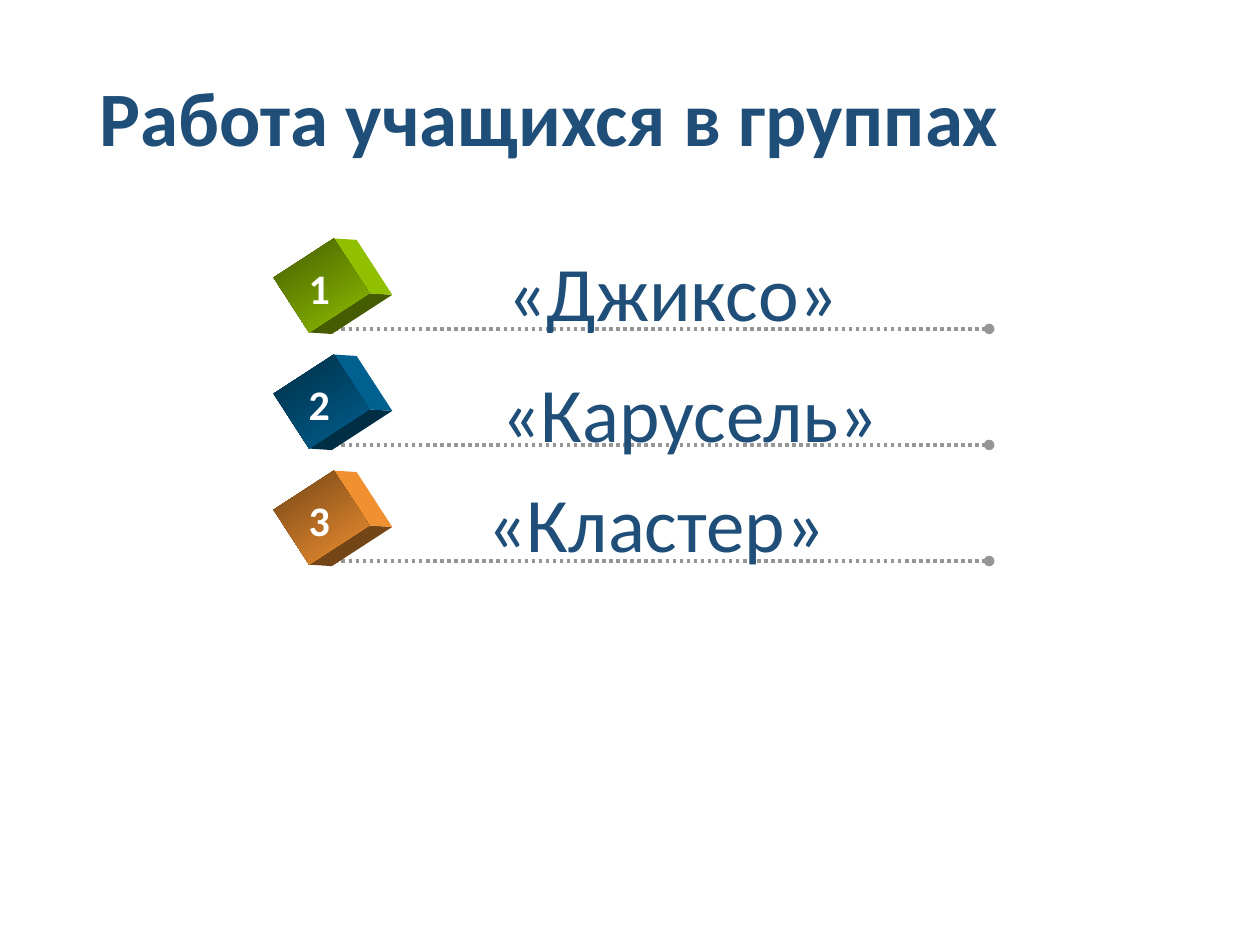
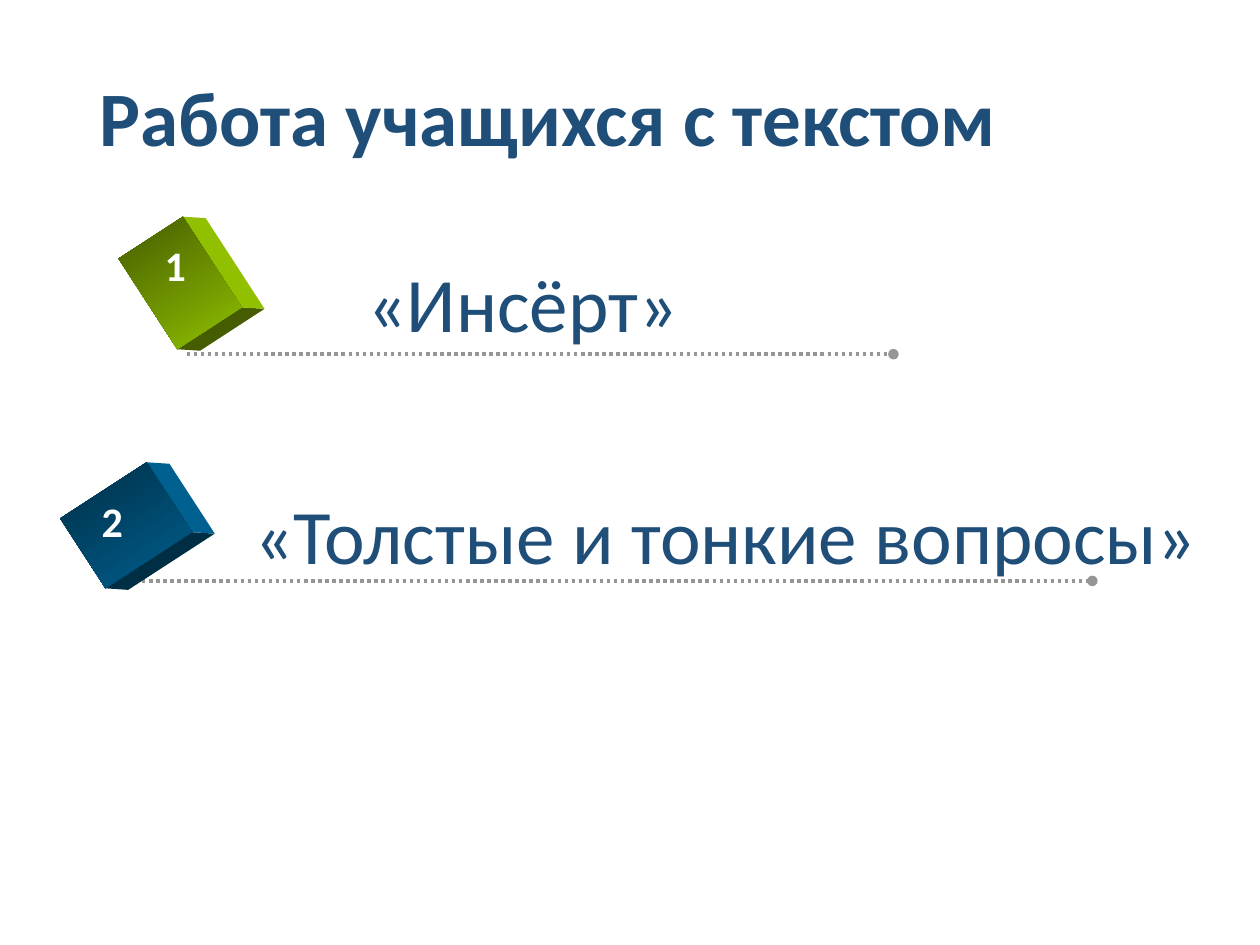
"""Build two slides of numbered cubes with dotted leader lines."""
import math
from dataclasses import dataclass
from typing import Any

import lxml.etree
import pptx
import pptx.dml.color
import pptx.enum.dml
import pptx.enum.shapes
import pptx.enum.text
import pptx.oxml.ns
import pptx.slide
import pptx.util

Cm = pptx.util.Cm
RGBColor = pptx.dml.color.RGBColor
NAVY = RGBColor(0x1F, 0x4E, 0x79)
WHITE = RGBColor(0xFF, 0xFF, 0xFF)
GREY = RGBColor(0x96, 0x96, 0x96)
GREEN = RGBColor(0x99, 0xCC, 0x00)
BLUE = RGBColor(0x00, 0x66, 0x99)
ORANGE = RGBColor(0xFF, 0x99, 0x33)

TILT = 57
DEPTH = (0.46, 0.03)
LIT, SHADED = 0.94, 0.45
TITLE = {"size": pptx.util.Pt(44), "bold": True}
LABEL = {"size": pptx.util.Pt(44), "bold": False}
DIGIT = {"size": pptx.util.Pt(24), "bold": True}
Point = tuple[float, float]


@dataclass(frozen=True)
class Box:
    """A rectangle in centimetres."""

    x: float
    y: float
    w: float
    h: float


@dataclass(frozen=True)
class Item:
    """A numbered cube with its label and leader line."""

    color: RGBColor
    cube: Box
    digit: Point
    text: str
    label: Point
    label_w: float
    line: Point
    line_end: float


def tone(color: RGBColor, factor: float) -> RGBColor:
    """Darken a colour by a factor."""
    return RGBColor(*(round(c * factor) for c in color))


def add_text(s: pptx.slide.Slide, box: Box, text: str, color: RGBColor,
             fmt: dict[str, Any]) -> Any:
    """Add one line of text and return its frame."""
    tf = s.shapes.add_textbox(Cm(box.x), Cm(box.y), Cm(box.w), Cm(box.h)).text_frame
    tf.word_wrap = True
    tf.margin_right = 0
    r = tf.paragraphs[0].add_run()
    r.text = text
    r.font.name = "Calibri"
    r.font.color.rgb = color
    for name, value in fmt.items():
        setattr(r.font, name, value)
    return tf


def add_title(s: pptx.slide.Slide, text: str) -> None:
    """Add the slide title."""
    tf = add_text(s, Box(1.75, 0.61, 21.9, 3.68), text, NAVY, TITLE)
    tf.vertical_anchor = pptx.enum.text.MSO_ANCHOR.MIDDLE
    tf.paragraphs[0].line_spacing = 0.9


def add_leader(s: pptx.slide.Slide, start: Point, end_x: float) -> None:
    """Add a dotted line that ends in a dot."""
    x, y = start
    ln = s.shapes.add_connector(pptx.enum.shapes.MSO_CONNECTOR.STRAIGHT,
                                Cm(x), Cm(y), Cm(end_x), Cm(y))
    ln.line.color.rgb = GREY
    ln.line.width = pptx.util.Pt(2)
    ln.line.dash_style = pptx.enum.dml.MSO_LINE.ROUND_DOT
    sp_pr = ln.element.spPr
    qn = pptx.oxml.ns.qn
    lxml.etree.SubElement(sp_pr.find(qn("a:ln")), qn("a:tailEnd"), type="oval")
    lxml.etree.SubElement(sp_pr, qn("a:effectLst"))


def add_face(s: pptx.slide.Slide, a: Point, b: Point, color: RGBColor) -> None:
    """Add the cube face swept from edge a-b along the depth."""
    dx, dy = DEPTH
    pts = [(Cm(x), Cm(y)) for x, y in
           (a, b, (b[0] + dx, b[1] + dy), (a[0] + dx, a[1] + dy))]
    fb = s.shapes.build_freeform(*pts[0])
    fb.add_line_segments(pts[1:], close=True)
    sp = fb.convert_to_shape()
    sp.shadow.inherit = False
    sp.fill.solid()
    sp.fill.fore_color.rgb = color
    sp.line.fill.background()


def add_cube(s: pptx.slide.Slide, box: Box, color: RGBColor) -> None:
    """Add a tilted block with a shaded front and two side faces."""
    cos, sin = math.cos(math.radians(TILT)), math.sin(math.radians(TILT))

    def corner(i: int, j: int) -> Point:
        """Return a rotated corner of the front face."""
        u, v = i * box.w / 2, j * box.h / 2
        return (box.x + box.w / 2 + u * cos - v * sin,
                box.y + box.h / 2 + u * sin + v * cos)

    top, right, bottom = corner(-1, -1), corner(1, -1), corner(1, 1)
    add_face(s, bottom, right, tone(color, SHADED))
    add_face(s, top, right, tone(color, LIT))
    sp = s.shapes.add_shape(pptx.enum.shapes.MSO_SHAPE.RECTANGLE,
                            Cm(box.x), Cm(box.y), Cm(box.w), Cm(box.h))
    sp.rotation = TILT
    sp.shadow.inherit = False
    sp.line.fill.background()
    sp.fill.gradient()
    sp.fill.gradient_angle = 0
    for stop, factor in zip(sp.fill.gradient_stops, (SHADED, LIT)):
        stop.color.rgb = tone(color, factor)


def add_item(s: pptx.slide.Slide, number: int, item: Item) -> None:
    """Add one numbered item."""
    add_leader(s, item.line, item.line_end)
    add_cube(s, item.cube, item.color)
    add_text(s, Box(*item.label, item.label_w, 2.13), item.text, NAVY, LABEL)
    add_text(s, Box(*item.digit, 1, 1.27), str(number), WHITE, DIGIT)


def group_item(row: int, color: RGBColor, text: str, label: Point, label_w: float) -> Item:
    """Place an item in the evenly spaced list of group methods."""
    dy = row * 2.34
    return Item(color, Box(5.82, 5.03 + dy, 1.32, 1.45), (5.97, 5.16 + dy),
                text, label, label_w, (6.6, 6.63 + dy), 19.94)


SLIDES: dict[str, list[Item]] = {
    "Работа учащихся в группах": [
        group_item(0, GREEN, "«Джиксо»", (9.98, 4.8), 7.26),
        group_item(1, BLUE, "«Карусель»", (9.86, 7.24), 8.18),
        group_item(2, ORANGE, "«Кластер»", (9.58, 9.47), 7.37),
    ],
    "Работа учащихся с текстом": [
        Item(GREEN, Box(2.54, 4.93, 2.18, 1.55), (3.07, 4.7),
             "«Инсёрт»", (7.16, 5.03), 6.83, (3.76, 7.14), 18.01),
        Item(BLUE, Box(1.7, 9.55, 1.68, 2.08), (1.8, 9.86),
             "«Толстые и тонкие вопросы»", (4.88, 9.7), 19.94, (2.72, 11.71), 22.02),
    ],
}


def main() -> None:
    """Build and save the presentation."""
    prs = pptx.Presentation()
    prs.slide_width, prs.slide_height = Cm(25.4), Cm(19.05)
    for title, items in SLIDES.items():
        s = prs.slides.add_slide(prs.slide_layouts[6])
        add_title(s, title)
        for number, item in enumerate(items, 1):
            add_item(s, number, item)
    prs.save("out.pptx")


if __name__ == "__main__":
    main()
